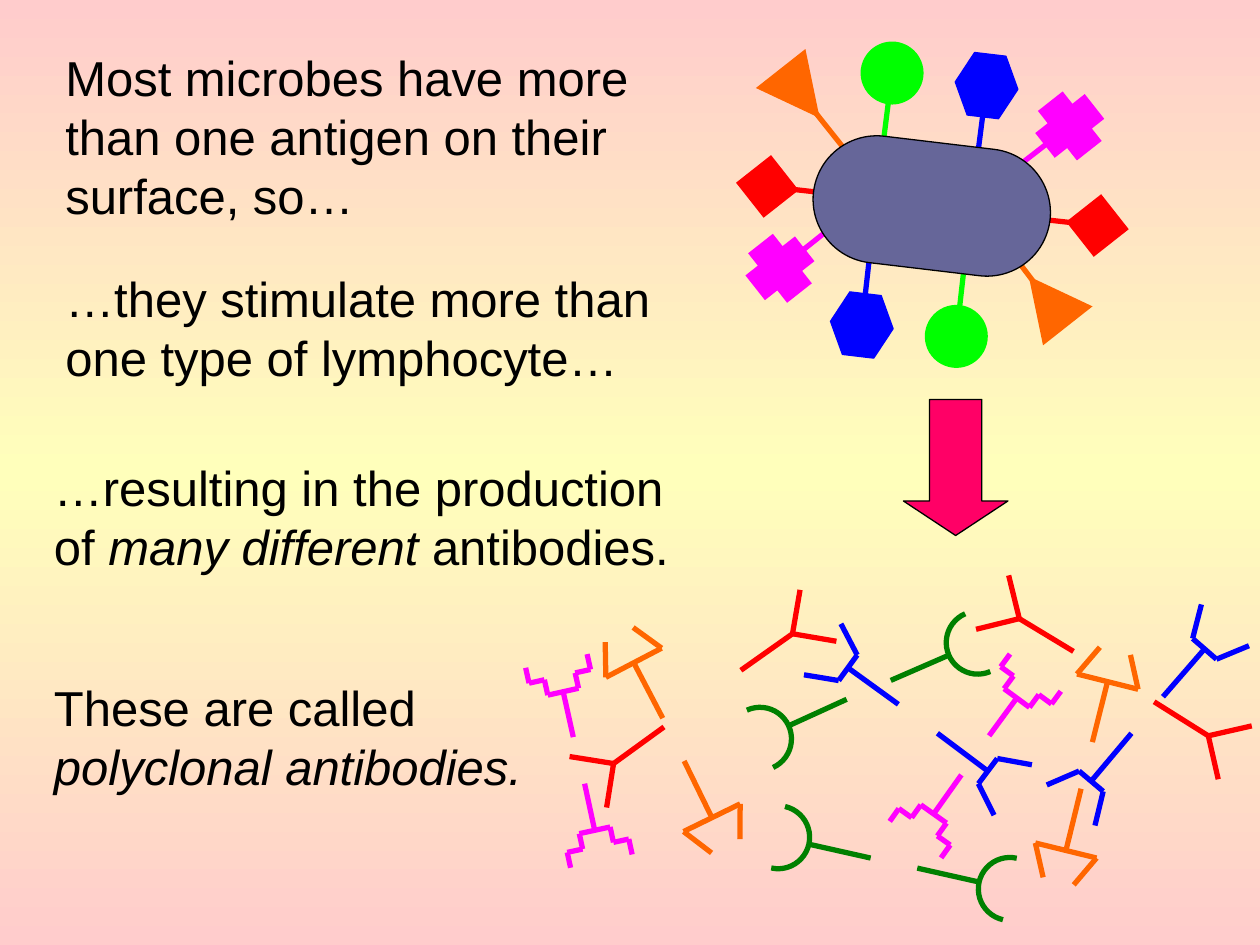
import copy
import dataclasses
import itertools
import math

import lxml.etree
import pptx
import pptx.dml.color
import pptx.enum.shapes
import pptx.enum.text
import pptx.oxml.ns
import pptx.util

SHAPES = pptx.enum.shapes.MSO_SHAPE


@dataclasses.dataclass
class Theme:
    font: str = "Arial"
    text_size: int = 28
    thick: float = 3
    thin: float = 0.75
    text: str = "000000"
    background: tuple = ("FFCCCC", "FFFFBB", "FFCCCC")
    microbe: str = "666699"
    arrow: str = "FF0066"
    red: str = "FF0000"
    blue: str = "0000FF"
    lime: str = "00FF00"
    green: str = "008000"
    magenta: str = "FF00FF"
    orange: str = "FF6600"


THEME = Theme()
TILT = 6.8
HEAD_SIZE = 0.5
ARM = 0.25
HALF = ARM / 2

ANTIGENS = [
    (SHAPES.HEXAGON, THEME.blue, TILT, (6.84, 2.58), (6.91, 1.96)),
    (SHAPES.OVAL, THEME.lime, TILT, (7.59, 2.67), (7.66, 2.05)),
    (SHAPES.OVAL, THEME.lime, TILT, (7.08, 0.58), (7, 1.21)),
    (SHAPES.HEXAGON, THEME.blue, TILT, (7.83, 0.68), (7.75, 1.3)),
    (SHAPES.DIAMOND, THEME.red, TILT, (6.09, 1.48), (6.71, 1.55)),
    (SHAPES.DIAMOND, THEME.red, TILT, (8.71, 1.79), (8.08, 1.72)),
    (SHAPES.CROSS, THEME.magenta, TILT + 45, (8.49, 1), (8, 1.38)),
    (SHAPES.ISOSCELES_TRIANGLE, THEME.orange, TILT + 315, (8.32, 2.39), (7.94, 1.89)),
    (SHAPES.ISOSCELES_TRIANGLE, THEME.orange, TILT + 135, (6.35, 0.74), (6.74, 1.23)),
    (SHAPES.CROSS, THEME.magenta, TILT + 45, (6.19, 2.13), (6.68, 1.74)),
]

BINDING_SITES = {
    THEME.red: [(-ARM, ARM), (0, 0)],
    THEME.blue: [(-ARM, ARM), (0, HALF)],
    THEME.magenta: [(-ARM, ARM), (-HALF, ARM), (-HALF, HALF), (0, HALF)],
    THEME.orange: [(-ARM, HALF), (0, ARM)],
}

ANTIBODIES = [
    (THEME.red, (6.29, 5.03), (5.88, 5.32)),
    (THEME.red, (4.87, 6.06), (5.27, 5.77)),
    (THEME.green, (7.53, 5.2), (7.07, 5.4)),
    (THEME.green, (6.26, 5.76), (6.72, 5.55)),
    (THEME.blue, (7.84, 6.12), (7.44, 5.82)),
    (THEME.blue, (6.73, 5.3), (7.13, 5.59)),
    (THEME.magenta, (7.41, 6.46), (7.63, 6.15)),
    (THEME.magenta, (8.07, 5.54), (7.85, 5.84)),
    (THEME.orange, (5.03, 5.26), (5.26, 5.7)),
    (THEME.orange, (5.65, 6.49), (5.43, 6.04)),
    (THEME.green, (7.77, 7), (7.28, 6.89)),
    (THEME.green, (6.42, 6.7), (6.91, 6.81)),
    (THEME.orange, (8.79, 5.41), (8.67, 5.89)),
    (THEME.orange, (8.46, 6.75), (8.58, 6.26)),
    (THEME.magenta, (4.72, 6.59), (4.64, 6.22)),
    (THEME.magenta, (4.47, 5.49), (4.55, 5.85)),
    (THEME.red, (9.59, 5.84), (9.16, 5.57)),
    (THEME.red, (8.09, 4.91), (8.52, 5.17)),
    (THEME.blue, (8.66, 6.2), (8.98, 5.82)),
    (THEME.blue, (9.56, 5.15), (9.23, 5.53)),
]


def lengths(*inches):
    return [pptx.util.Cm(2.54 * value) for value in inches]


def rgb(value):
    return pptx.dml.color.RGBColor.from_string(value)


class SlideBuilder:
    """Draws themed elements on the current slide."""

    def __init__(self, slide, theme):
        self.slide = slide
        self.theme = theme

    def background(self):
        fill = self.slide.background.fill
        fill.gradient()
        fill.gradient_angle = 270
        stop_list = self.slide.element.find(".//" + pptx.oxml.ns.qn("a:gsLst"))
        stop_list.append(copy.deepcopy(stop_list[0]))
        for index, color in enumerate(self.theme.background):
            stop = fill.gradient_stops[index]
            stop.position = index / 2
            stop.color.rgb = rgb(color)

    def shape(self, kind, box, fill=None, line=None, width=None, rotation=0, adjustments=()):
        shape = self.slide.shapes.add_shape(kind, *lengths(*box))
        shape.shadow.inherit = False
        shape.rotation = rotation
        for index, value in enumerate(adjustments):
            shape.adjustments[index] = value
        for target, color in ((shape.fill, fill), (shape.line.fill, line)):
            if color:
                target.solid()
                target.fore_color.rgb = rgb(color)
            else:
                target.background()
        if line:
            shape.line.width = pptx.util.Pt(width or self.theme.thin)

    def line(self, start, end, color):
        connector = self.slide.shapes.add_connector(
            pptx.enum.shapes.MSO_CONNECTOR.STRAIGHT, *lengths(*start, *end))
        connector.line.color.rgb = rgb(color)
        connector.line.width = pptx.util.Pt(self.theme.thick)
        properties = connector.element.find(pptx.oxml.ns.qn("p:spPr"))
        lxml.etree.SubElement(properties, pptx.oxml.ns.qn("a:effectLst"))

    def text(self, box, *runs):
        frame = self.slide.shapes.add_textbox(*lengths(*box)).text_frame
        frame.word_wrap = True
        frame.auto_size = pptx.enum.text.MSO_AUTO_SIZE.SHAPE_TO_FIT_TEXT
        paragraph = frame.paragraphs[0]
        paragraph.font.name = self.theme.font
        paragraph.font.size = pptx.util.Pt(self.theme.text_size)
        paragraph.font.color.rgb = rgb(self.theme.text)
        for index, words in enumerate(runs):
            run = paragraph.add_run()
            run.text = words
            if index % 2:
                run.font.italic = True

    def antigen(self, kind, color, rotation, center, root):
        box = (center[0] - HEAD_SIZE / 2, center[1] - HEAD_SIZE / 2, HEAD_SIZE, HEAD_SIZE)
        outline = color if kind == SHAPES.HEXAGON else None
        self.shape(kind, box, color, outline, rotation=rotation)
        self.line(center, root, color)

    def antibody(self, color, joint, tip):
        angle = math.atan2(tip[1] - joint[1], tip[0] - joint[0])
        cosine, sine = math.cos(angle), math.sin(angle)
        if color == self.theme.green:
            left, top = joint[0] - ARM * cosine - ARM, joint[1] - ARM * sine - ARM
            self.shape(SHAPES.ARC, (left, top, 2 * ARM, 2 * ARM), line=color,
                       width=self.theme.thick, rotation=math.degrees(angle),
                       adjustments=(162, 54))
        else:
            side = BINDING_SITES[color]
            outline = side + [(along, -across) for along, across in reversed(side)]
            points = [(joint[0] + along * cosine - across * sine,
                       joint[1] + along * sine + across * cosine)
                      for along, across in outline]
            for start, end in itertools.pairwise(points):
                if start != end:
                    self.line(start, end, color)
        self.line(joint, tip, color)


def main():
    presentation = pptx.Presentation()
    presentation.slide_width, presentation.slide_height = lengths(10, 7.5)
    slide = presentation.slides.add_slide(presentation.slide_layouts[6])
    builder = SlideBuilder(slide, THEME)
    builder.background()
    for antigen in ANTIGENS:
        builder.antigen(*antigen)
    builder.shape(SHAPES.ROUNDED_RECTANGLE, (6.45, 1.13, 1.89, 1.01), THEME.microbe,
                  THEME.text, rotation=TILT, adjustments=(0.5,))
    builder.text((0.42, 0.33, 4.75, 1.5),
                 "Most microbes have more than one antigen on their surface, so…")
    builder.text((0.42, 2.08, 5.08, 1.03), "…they stimulate more than one type of lymphocyte…")
    for antibody in ANTIBODIES:
        builder.antibody(*antibody)
    builder.shape(SHAPES.DOWN_ARROW, (7.17, 3.17, 0.83, 1.08), THEME.arrow, THEME.text,
                  adjustments=(0.5, 0.33))
    builder.text((0.33, 3.58, 5.42, 1.03),
                 "…resulting in the production of ", "many different", " antibodies.")
    builder.text((0.33, 5.33, 4.42, 1.03), "These are called ", "polyclonal antibodies.")
    presentation.save("out.pptx")


if __name__ == "__main__":
    main()
